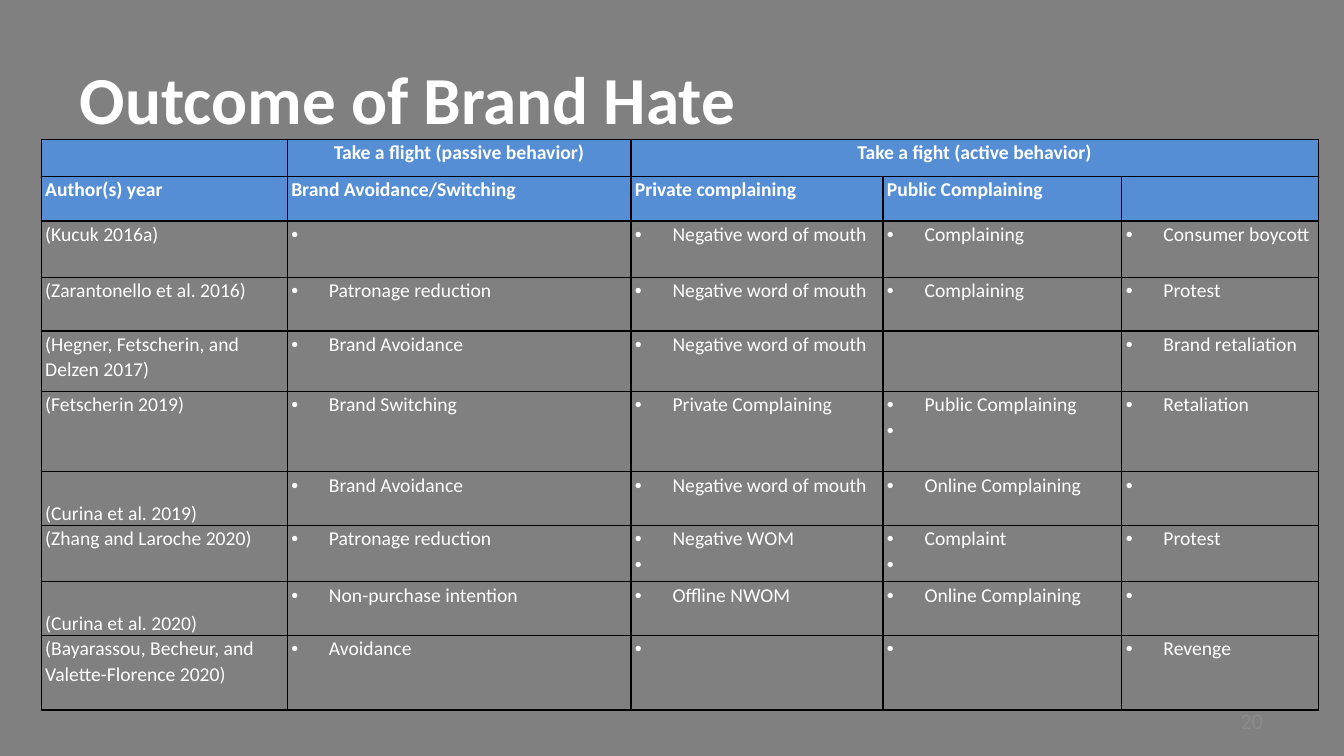
import pptx
import pptx.dml.color
import pptx.enum.text
import pptx.oxml
import pptx.oxml.ns
import pptx.util
from pptx.util import Cm, Pt

TITLE = "Outcome of Brand Hate"
PAGE_NUMBER = "20"
BARE = " "  # no-break space: a bullet that stands alone
GROUPS = ["", "Take a flight (passive behavior)", "Take a fight (active behavior)"]
HEADINGS = ["Author(s) year", "Brand Avoidance/Switching", "Private complaining",
            "Public Complaining", ""]
# Author, then one list of outcomes for each behavior column
STUDIES = [
    ("(Kucuk 2016a)", [BARE], ["Negative word of mouth"], ["Complaining"], ["Consumer boycott"]),
    ("(Zarantonello et al. 2016)", ["Patronage reduction"], ["Negative word of mouth"],
     ["Complaining"], ["Protest"]),
    ("(Hegner, Fetscherin, and Delzen 2017)", ["Brand Avoidance"], ["Negative word of mouth"],
     [], ["Brand retaliation"]),
    ("(Fetscherin 2019)", ["Brand Switching"], ["Private Complaining"],
     ["Public Complaining", BARE], ["Retaliation"]),
    ("(Curina et al. 2019)", ["Brand Avoidance"], ["Negative word of mouth"],
     ["Online Complaining"], [BARE]),
    ("(Zhang and Laroche 2020)", ["Patronage reduction"], ["Negative WOM", BARE],
     ["Complaint", BARE], ["Protest"]),
    ("(Curina et al. 2020)", ["Non-purchase intention"], ["Offline NWOM"],
     ["Online Complaining"], [BARE]),
    ("(Bayarassou, Becheur, and Valette-Florence 2020)", ["Avoidance"], [BARE], [BARE],
     ["Revenge"]),
]
BOTTOM_AUTHORS = {"(Curina et al. 2019)", "(Curina et al. 2020)"}

COLUMN_WIDTHS = [6.2, 8.66, 6.35, 6.02, 4.95]
ROW_HEIGHTS = [0.94, 1.12, 1.42, 1.35, 1.52, 2.03, 1.35, 1.42, 1.35, 1.88]
FONT = "Calibri"
GRAY, BLUE, WHITE, BLACK, PALE = "808080", "558ED5", "FFFFFF", "000000", "8C8C8C"
CENTER = pptx.enum.text.PP_ALIGN.CENTER
LEFT = pptx.enum.text.PP_ALIGN.LEFT
RIGHT = pptx.enum.text.PP_ALIGN.RIGHT


def paint(color_format, value):
    color_format.rgb = pptx.dml.color.RGBColor.from_string(value)


def add_run(paragraph, text, size, color=WHITE, bold=False):
    run = paragraph.add_run()
    run.text = text
    run.font.name, run.font.size, run.font.bold = FONT, Pt(size), bold
    paint(run.font.color, color)


def set_frame(frame):
    """Give a free-standing text frame its margins and middle anchor."""
    frame.word_wrap = True
    frame.auto_size = pptx.enum.text.MSO_AUTO_SIZE.NONE
    frame.vertical_anchor = pptx.enum.text.MSO_ANCHOR.MIDDLE
    frame.margin_left = frame.margin_right = Cm(0.33)
    frame.margin_top = frame.margin_bottom = Cm(0.17)


def add_bullet(paragraph):
    properties = paragraph._p.get_or_add_pPr()
    properties.set("marL", str(Cm(0.95)))
    properties.set("indent", str(-Cm(0.95)))
    for tag, attribute in (("buFont", 'typeface="Arial"'), ("buChar", 'char="•"')):
        properties.append(pptx.oxml.parse_xml(
            f'<a:{tag} {pptx.oxml.ns.nsdecls("a")} {attribute}/>'))


def add_borders(cell):
    properties = cell._tc.get_or_add_tcPr()
    for position, side in enumerate(("lnL", "lnR", "lnT", "lnB")):
        properties.insert(position, pptx.oxml.parse_xml(
            f'<a:{side} {pptx.oxml.ns.nsdecls("a")} w="{Pt(1)}"><a:solidFill>'
            f'<a:srgbClr val="{BLACK}"/></a:solidFill></a:{side}>'))


def write_cell(cell, lines, bold=False, align=LEFT, bulleted=False):
    for index, line in enumerate(lines):
        frame = cell.text_frame
        paragraph = frame.add_paragraph() if index else frame.paragraphs[0]
        paragraph.alignment = align
        paragraph.line_spacing = 1.07
        if bulleted:
            add_bullet(paragraph)
        add_run(paragraph, line, 14, bold=bold)


def add_outcome_table(slide):
    shape = slide.shapes.add_table(
        len(ROW_HEIGHTS), len(COLUMN_WIDTHS), Cm(1.04), Cm(3.51),
        Cm(sum(COLUMN_WIDTHS)), Cm(sum(ROW_HEIGHTS)))
    table = shape.table
    table.first_row = table.horz_banding = False
    for column, width in zip(table.columns, COLUMN_WIDTHS):
        column.width = Cm(width)
    for row_index, (row, height) in enumerate(zip(table.rows, ROW_HEIGHTS)):
        row.height = Cm(height)
        for cell in row.cells:
            cell.margin_left = cell.margin_right = Cm(0.1)
            cell.margin_top = cell.margin_bottom = 0
            if row_index < 2:
                cell.fill.solid()
                paint(cell.fill.fore_color, BLUE)
            else:
                cell.fill.background()
            add_borders(cell)

    table.cell(0, 2).merge(table.cell(0, 4))
    for row_index, (headings, align) in enumerate([(GROUPS, CENTER), (HEADINGS, LEFT)]):
        for column_index, heading in enumerate(headings):
            if heading:
                write_cell(table.cell(row_index, column_index), [heading], True, align)
    for row_index, (author, *outcomes) in enumerate(STUDIES, start=2):
        author_cell = table.cell(row_index, 0)
        write_cell(author_cell, [author])
        if author in BOTTOM_AUTHORS:
            author_cell.vertical_anchor = pptx.enum.text.MSO_ANCHOR.BOTTOM
        for column_index, lines in enumerate(outcomes, start=1):
            write_cell(table.cell(row_index, column_index), lines, bulleted=True)


def main():
    presentation = pptx.Presentation()
    presentation.slide_width, presentation.slide_height = Cm(33.87), Cm(19.05)
    slide = presentation.slides.add_slide(presentation.slide_layouts[5])
    slide.background.fill.solid()
    paint(slide.background.fill.fore_color, GRAY)

    title = slide.shapes.title
    title.left, title.top, title.width, title.height = Cm(1.68), Cm(1.47), Cm(30.48), Cm(1.98)
    number = slide.shapes.add_textbox(Cm(24.26), Cm(17.65), Cm(7.9), Cm(1.02))
    for shape, text, size, color, bold, align in (
            (title, TITLE, 48, WHITE, True, LEFT),
            (number, PAGE_NUMBER, 16, PALE, False, RIGHT)):
        set_frame(shape.text_frame)
        paragraph = shape.text_frame.paragraphs[0]
        paragraph.alignment = align
        add_run(paragraph, text, size, color, bold)

    add_outcome_table(slide)
    presentation.save("out.pptx")


if __name__ == "__main__":
    main()
